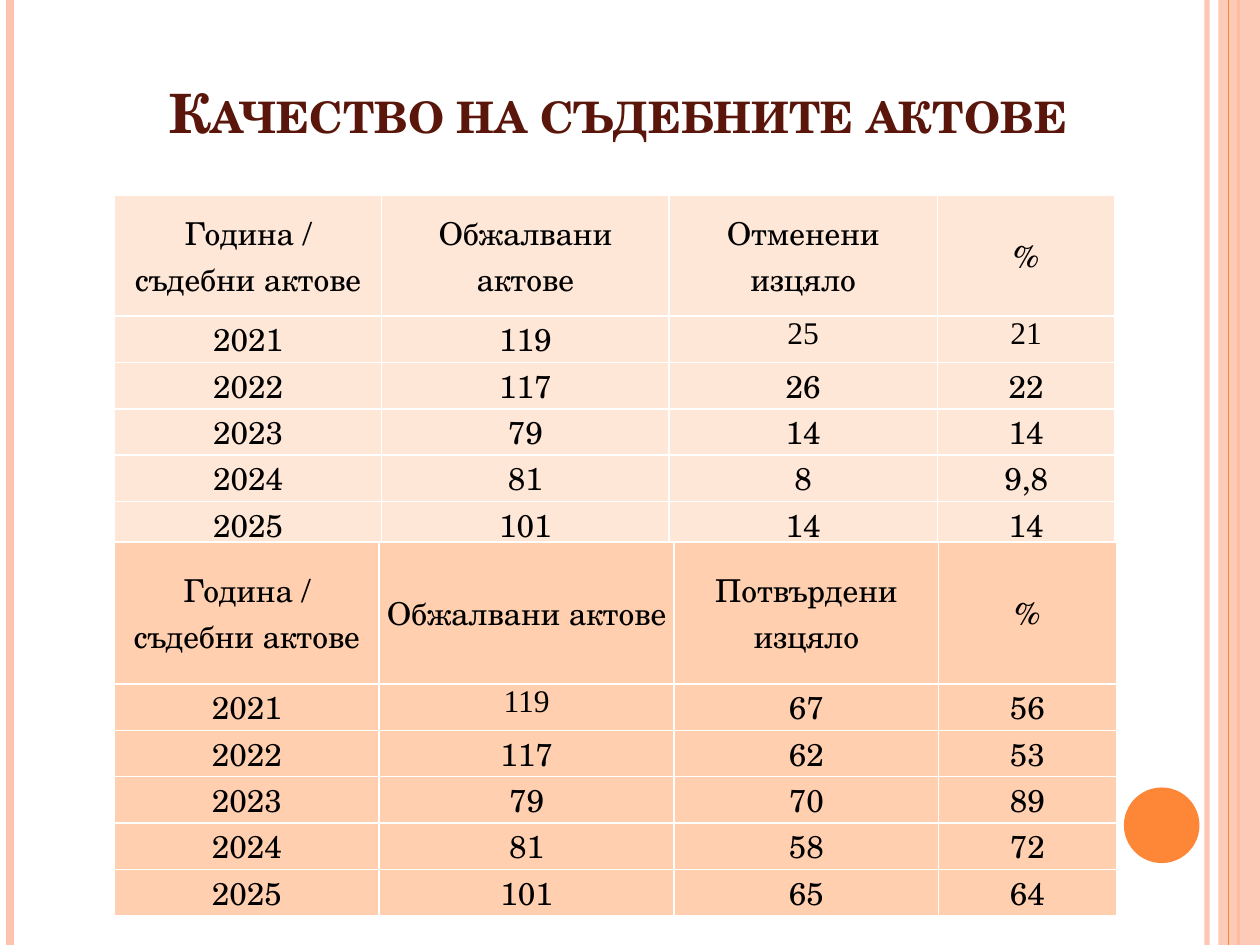
import pptx
from lxml import etree
from pptx.dml.color import RGBColor
from pptx.enum.shapes import MSO_CONNECTOR, MSO_SHAPE
from pptx.enum.text import MSO_ANCHOR, MSO_AUTO_SIZE, PP_ALIGN
from pptx.oxml.ns import qn
from pptx.util import Inches, Pt

BLACK = RGBColor(0x00, 0x00, 0x00)
WHITE = RGBColor(0xFF, 0xFF, 0xFF)
BROWN = RGBColor(0x5A, 0x16, 0x0B)
ORANGE = RGBColor(0xFE, 0x86, 0x37)
PINK = RGBColor(0xFE, 0xC3, 0xAE)
LIGHT_PEACH = RGBColor(0xFF, 0xE7, 0xD7)
PEACH = RGBColor(0xFF, 0xCF, 0xAF)
SERIF = "TeX Gyre Schola"
TIMES = "Times New Roman"

TITLE = "Качество на съдебните актове "
TABLES = [
    {
        "top": 1.55, "header_height": 0.96, "row_height": 0.31,
        "columns": [2.12, 2.28, 2.13, 1.41], "fill": LIGHT_PEACH,
        "times_cells": {(1, 2), (1, 3)},
        "rows": [
            ("Година / съдебни актове", "Обжалвани актове", "Отменени изцяло", "%"),
            ("2021", "119", "25", "21"),
            ("2022", "117", "26", "22"),
            ("2023", "79", "14", "14"),
            ("2024", "81", "8", "9,8"),
            ("2025", "101", "14", "14"),
        ],
    },
    {
        "top": 4.3, "header_height": 1.13, "row_height": 0.34,
        "columns": [2.1, 2.34, 2.1, 1.41], "fill": PEACH,
        "times_cells": {(1, 1)},
        "rows": [
            ("Година / съдебни актове", "Обжалвани актове", "Потвърдени изцяло", "%"),
            ("2021", "119", "67", "56"),
            ("2022", "117", "62", "53"),
            ("2023", "79", "70", "89"),
            ("2024", "81", "58", "72"),
            ("2025", "101", "65", "64"),
        ],
    },
]
TABLE_LEFT = 0.91

# x position, colour, width in points, opacity in percent
OUTER_STRIPES = [(9.58, PINK, 3, 93), (0.08, PINK, 4.5, 100), (9.83, ORANGE, 1.5, 100)]
BAND_STRIPE = (9.75, ORANGE, 0.75, 100)


def set_opacity(fill_parent, percent):
    color = fill_parent.find(qn("a:solidFill"))[0]
    etree.SubElement(color, qn("a:alpha")).set("val", str(percent * 1000))


def add_stripe(slide, x, color, width, opacity):
    stripe = slide.shapes.add_connector(
        MSO_CONNECTOR.STRAIGHT, Inches(x), 0, Inches(x), Inches(7.5))
    stripe.line.color.rgb = color
    stripe.line.width = Pt(width)
    properties = stripe._element.spPr
    if opacity < 100:
        set_opacity(properties.find(qn("a:ln")), opacity)
    etree.SubElement(properties, qn("a:effectLst"))


def add_solid(slide, kind, left, top, width, height, color):
    solid = slide.shapes.add_shape(
        kind, Inches(left), Inches(top), Inches(width), Inches(height))
    solid.shadow.inherit = False
    solid.fill.solid()
    solid.fill.fore_color.rgb = color
    solid.line.fill.background()
    return solid


def write(frame, text, *, size=18, font=SERIF, color=BLACK, bold=False,
          small_caps=False):
    paragraph = frame.paragraphs[0]
    paragraph.alignment = PP_ALIGN.CENTER
    run = paragraph.add_run()
    run.text = text
    run.font.size = Pt(size)
    run.font.name = font
    run.font.bold = bold
    run.font.color.rgb = color
    if small_caps:
        run.font._element.set("cap", "small")


def add_borders(cell):
    """Draw white 1 pt edges; they must precede the fill in the cell properties."""
    properties = cell._tc.get_or_add_tcPr()
    for position, side in enumerate(("a:lnL", "a:lnR", "a:lnT", "a:lnB")):
        edge = etree.Element(qn(side), w=str(Pt(1)))
        fill = etree.SubElement(edge, qn("a:solidFill"))
        etree.SubElement(fill, qn("a:srgbClr")).set("val", str(WHITE))
        properties.insert(position, edge)


def add_acts_table(slide, acts):
    rows, columns = acts["rows"], acts["columns"]
    heights = [acts["header_height"]] + [acts["row_height"]] * (len(rows) - 1)
    table = slide.shapes.add_table(
        len(rows), len(columns), Inches(TABLE_LEFT), Inches(acts["top"]),
        Inches(sum(columns)), Inches(sum(heights))).table
    for column, width in zip(table.columns, columns):
        column.width = Inches(width)
    for r, values in enumerate(rows):
        table.rows[r].height = Inches(heights[r])
        for c, value in enumerate(values):
            cell = table.cell(r, c)
            cell.margin_left = cell.margin_right = Inches(0.05)
            cell.margin_top = cell.margin_bottom = 0
            cell.vertical_anchor = MSO_ANCHOR.TOP if r else MSO_ANCHOR.MIDDLE
            cell.fill.solid()
            cell.fill.fore_color.rgb = acts["fill"]
            add_borders(cell)
            font = TIMES if (r, c) in acts["times_cells"] else SERIF
            write(cell.text_frame, value, font=font)


def main():
    deck = pptx.Presentation()
    deck.slide_width, deck.slide_height = Inches(10), Inches(7.5)
    slide = deck.slides.add_slide(deck.slide_layouts[5])

    for stripe in OUTER_STRIPES:
        add_stripe(slide, *stripe)
    band = add_solid(slide, MSO_SHAPE.RECTANGLE, 9.67, 0, 0.33, 7.5, PINK)
    set_opacity(band._element.spPr, 87)
    add_stripe(slide, *BAND_STRIPE)
    add_solid(slide, MSO_SHAPE.OVAL, 8.92, 6.25, 0.6, 0.6, ORANGE)

    title = slide.shapes.title
    title.left, title.top = Inches(0.5), Inches(0.43)
    title.width, title.height = Inches(8.91), Inches(0.77)
    title.text_frame.auto_size = MSO_AUTO_SIZE.NONE
    title.text_frame.vertical_anchor = MSO_ANCHOR.BOTTOM
    write(title.text_frame, TITLE, size=31, color=BROWN, bold=True, small_caps=True)

    for acts in TABLES:
        add_acts_table(slide, acts)
    deck.save("out.pptx")


if __name__ == "__main__":
    main()
